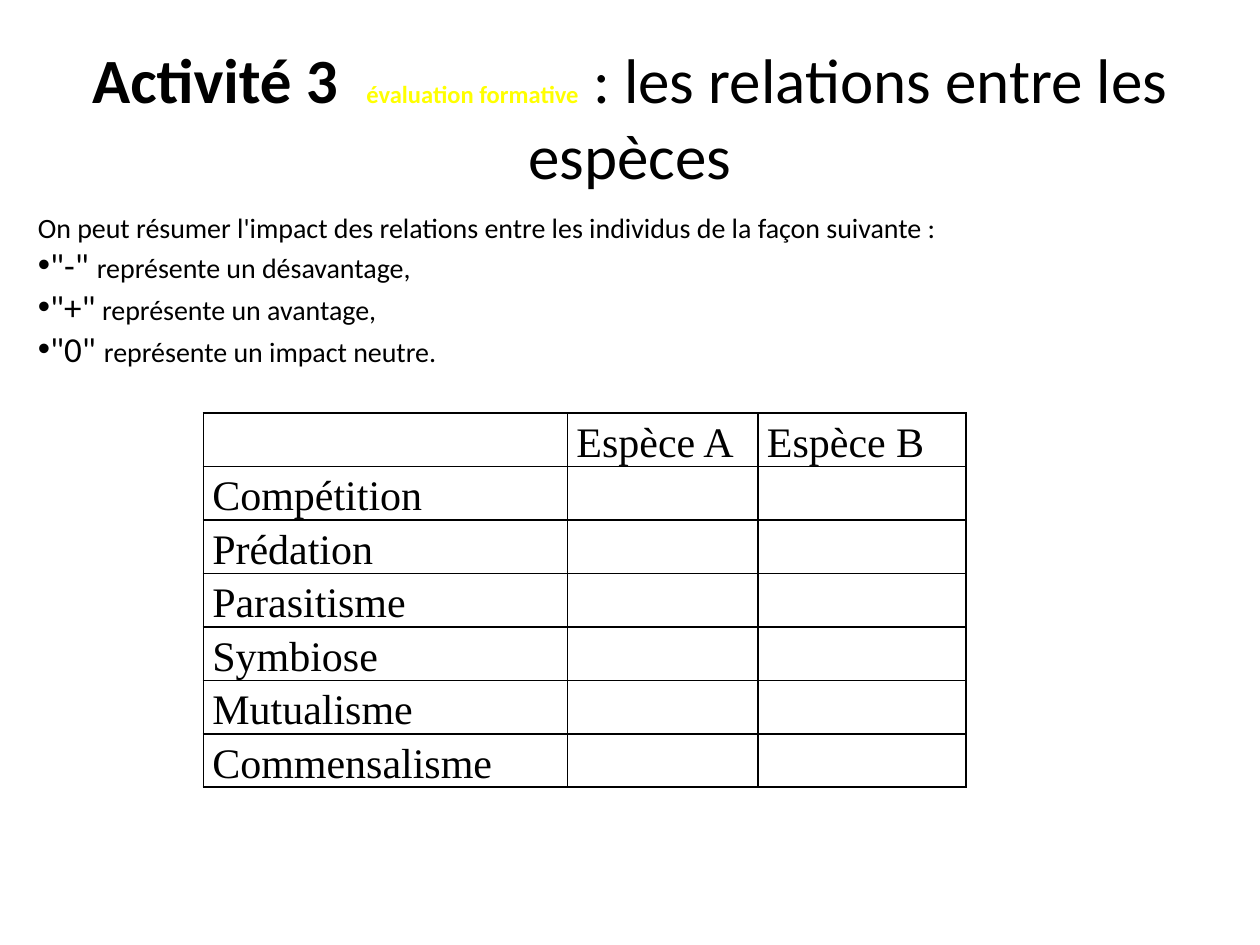
from lxml import etree
from pptx import Presentation
from pptx.dml.color import RGBColor
from pptx.enum.text import MSO_ANCHOR, MSO_AUTO_SIZE, PP_ALIGN
from pptx.oxml.ns import qn
from pptx.util import Cm, Pt

TOP, MIDDLE = MSO_ANCHOR.TOP, MSO_ANCHOR.MIDDLE
FIXED = MSO_AUTO_SIZE.NONE
LEFT, CENTER = PP_ALIGN.LEFT, PP_ALIGN.CENTER
BLACK, YELLOW = "000000", "FFFF00"
SANS, SERIF = "Calibri", "Times New Roman"

INTRO = "On peut résumer l'impact des relations entre les individus de la façon suivante :"
SIGNS = [
    ('"-" ', "représente un désavantage,"),
    ('"+"', " représente un avantage,"),
    ('"0" ', "représente un impact neutre."),
]
HEADS = ["", "Espèce A", "Espèce B"]
LINKS = ["Compétition", "Prédation", "Parasitisme",
         "Symbiose", "Mutualisme", "Commensalisme"]
WIDTHS = [7.34, 3.84, 4.19]
ROW = 1.07


def color(code):
    return RGBColor.from_string(code)


def write(para, text, size=16, font=SANS, ink=BLACK, bold=False):
    run = para.add_run()
    run.text = text
    run.font.size = Pt(size)
    run.font.name = font
    run.font.bold = bold
    run.font.color.rgb = color(ink)


def place(shape, left, top, width, height, anchor):
    """Move a placeholder and return its text frame."""
    shape.left, shape.top = Cm(left), Cm(top)
    shape.width, shape.height = Cm(width), Cm(height)
    frame = shape.text_frame
    frame.word_wrap = True
    frame.auto_size = FIXED
    frame.vertical_anchor = anchor
    return frame


def set_bullet(para, char=None):
    """Set the bullet flush with the text, or none without a char."""
    props = para._p.get_or_add_pPr()
    props.set("marL", "0")
    props.set("indent", "0")
    if char:
        etree.SubElement(props, qn("a:buChar"), char=char)
    else:
        etree.SubElement(props, qn("a:buNone"))


def add_title(slide):
    frame = place(slide.shapes.title, 1.27, 0.76, 22.86, 3.18, MIDDLE)
    para = frame.paragraphs[0]
    para.alignment = CENTER
    write(para, "Activité 3  ", size=36, bold=True)
    write(para, "évaluation formative", size=14, ink=YELLOW, bold=True)
    write(para, "\u00a0: les relations entre les espèces", size=36)


def add_body(slide):
    frame = place(slide.placeholders[1], 0.51, 4.11, 25.4, 4.27, TOP)
    intro = frame.paragraphs[0]
    write(intro, INTRO)
    set_bullet(intro)
    for sign, sense in SIGNS:
        para = frame.add_paragraph()
        write(para, sign, size=20)
        write(para, sense)
        set_bullet(para, "•")
    for para in frame.paragraphs:
        para.alignment = LEFT
        para.space_before = Pt(0)


def add_border(cell):
    props = cell._tc.get_or_add_tcPr()
    for spot, side in enumerate(("lnL", "lnR", "lnT", "lnB")):
        line = etree.Element(qn(f"a:{side}"), w=str(Pt(1)))
        fill = etree.SubElement(line, qn("a:solidFill"))
        etree.SubElement(fill, qn("a:srgbClr"), val=BLACK)
        props.insert(spot, line)


def fill_cell(cell, text):
    cell.margin_left = cell.margin_right = Cm(0.18)
    cell.margin_top = cell.margin_bottom = Cm(0)
    cell.fill.background()
    add_border(cell)
    if text:
        para = cell.text_frame.paragraphs[0]
        para.line_spacing = 1.15
        para.space_before = para.space_after = Pt(6)
        write(para, text, size=24, font=SERIF)


def add_grid(slide):
    rows = [HEADS] + [[link, "", ""] for link in LINKS]
    table = slide.shapes.add_table(
        len(rows), len(HEADS), Cm(4.1), Cm(8.33),
        Cm(sum(WIDTHS)), Cm(ROW * len(rows))).table
    table.first_row = table.horz_banding = False
    for column, width in zip(table.columns, WIDTHS):
        column.width = Cm(width)
    for r, row in enumerate(rows):
        for c, text in enumerate(row):
            fill_cell(table.cell(r, c), text)


def main():
    deck = Presentation()
    deck.slide_width, deck.slide_height = Cm(25.4), Cm(19.05)
    slide = deck.slides.add_slide(deck.slide_layouts[1])
    add_title(slide)
    add_grid(slide)
    add_body(slide)
    deck.save("out.pptx")


if __name__ == "__main__":
    main()
